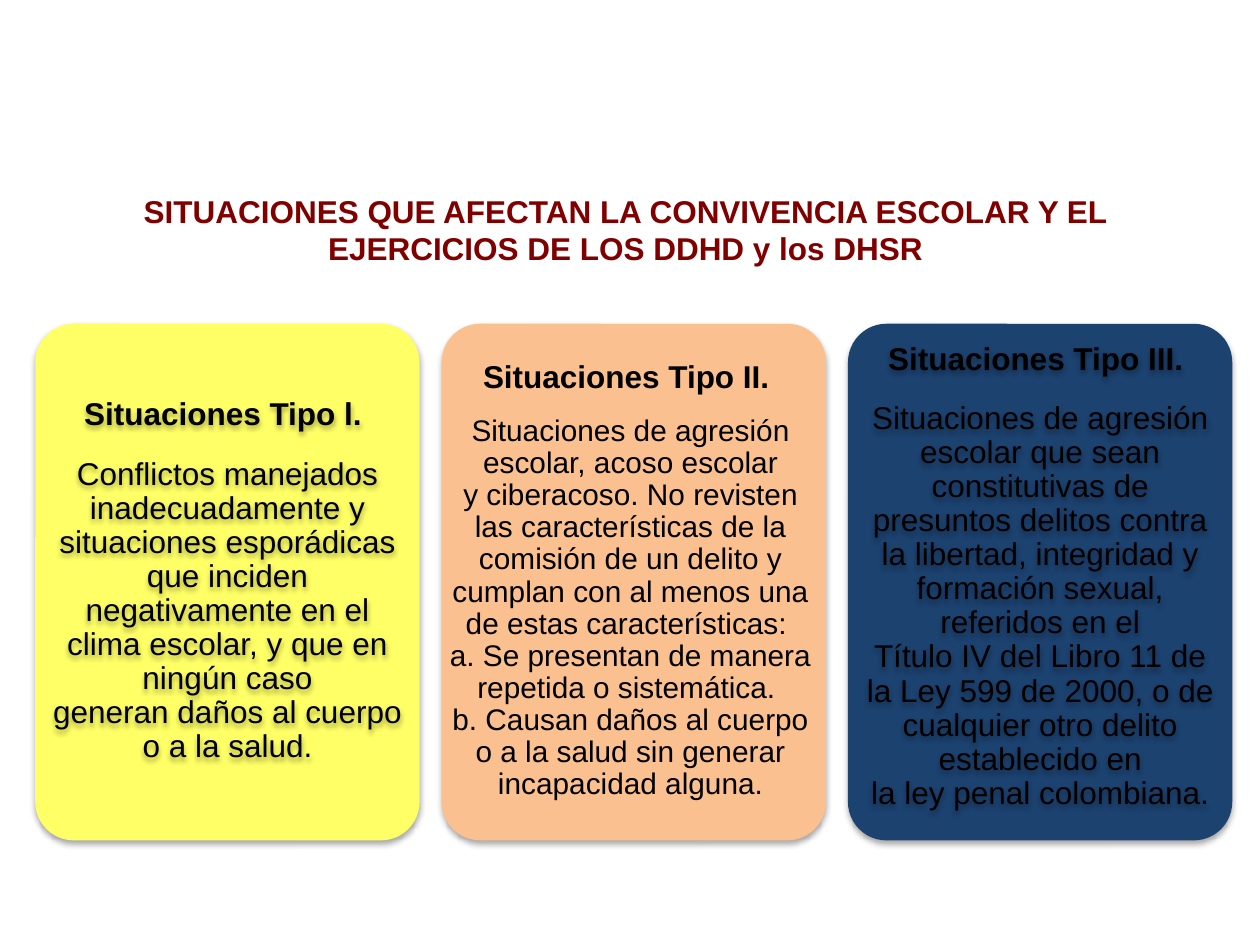
from lxml import etree
from pptx import Presentation
from pptx.dml.color import RGBColor
from pptx.enum.shapes import MSO_SHAPE
from pptx.enum.text import MSO_ANCHOR, MSO_AUTO_SIZE, PP_ALIGN
from pptx.oxml.ns import qn
from pptx.util import Inches, Pt

CENTER = PP_ALIGN.CENTER
TOP, MIDDLE = MSO_ANCHOR.TOP, MSO_ANCHOR.MIDDLE
NO_AUTOFIT = MSO_AUTO_SIZE.NONE
ROUNDED = MSO_SHAPE.ROUNDED_RECTANGLE

FONT = "Arial"
MAROON = RGBColor(0x80, 0x00, 0x00)
BLACK = RGBColor(0x00, 0x00, 0x00)
YELLOW = RGBColor(0xFF, 0xFF, 0x66)
PEACH = RGBColor(0xFA, 0xC0, 0x90)
NAVY = RGBColor(0x1C, 0x42, 0x70)

CARD_LEFT, CARD_TOP = 0.28, 2.57
CARD_WIDTH, CARD_HEIGHT = 3.05, 4.1
CARD_STEP = 3.225

TITLE = ("SITUACIONES QUE AFECTAN LA CONVIVENCIA ESCOLAR Y EL "
         "EJERCICIOS DE LOS DDHD y los DHSR")

# Each card: fill, text box (left, top, width, height), body size,
# gap under the heading, shadow on the text, heading, body paragraphs
CARDS = [
    (YELLOW, (0.28, 2.96, 3.05, 3.31), 18, 14.5, True, "Situaciones Tipo l. ", [
        "Conflictos manejados inadecuadamente y",
        "situaciones esporádicas que inciden negativamente en el clima "
        "escolar, y que en ningún caso",
        "generan daños al cuerpo o a la salud.",
    ]),
    (PEACH, (3.43, 2.57, 3.15, 4.09), 17, 11.4, False, "Situaciones Tipo II. ", [
        "Situaciones de agresión escolar, acoso escolar",
        "y ciberacoso. No revisten las características de la comisión de un "
        "delito y cumplan con al menos una de estas características: ",
        "a. Se presentan de manera repetida o sistemática. ",
        "b. Causan daños al cuerpo o a la salud sin generar incapacidad alguna.",
    ]),
    (NAVY, (6.73, 2.81, 3.05, 3.54), 18, 14.5, True, "Situaciones Tipo III. ", [
        "Situaciones de agresión escolar que sean",
        "constitutivas de presuntos delitos contra la libertad, integridad y "
        "formación sexual, referidos en el",
        "Título IV del Libro 11 de la Ley 599 de 2000, o de cualquier otro "
        "delito establecido en",
        "la ley penal colombiana.",
    ]),
]


def write(p, text, size=18, bold=False, color=BLACK, spacing=None, after=0):
    """Fill a centred paragraph with one formatted run."""
    p.alignment = CENTER
    p.space_before = Pt(0)
    p.space_after = Pt(after)
    if spacing:
        p.line_spacing = spacing
    r = p.add_run()
    r.text = text
    r.font.name = FONT
    r.font.size = Pt(size)
    r.font.bold = bold
    r.font.color.rgb = color


def add_shadow(sp):
    """Give a shape a soft shadow straight below it."""
    sp.shadow.inherit = False
    effects = sp._element.spPr.find(qn("a:effectLst"))
    shadow = etree.SubElement(effects, qn("a:outerShdw"), blurRad="40000",
                              dist="23000", dir="5400000", rotWithShape="0")
    color = etree.SubElement(shadow, qn("a:srgbClr"), val="000000")
    etree.SubElement(color, qn("a:alpha"), val="35000")


def add_title(s):
    sp = s.shapes.title
    sp.left, sp.top = Inches(0.28), Inches(1.47)
    sp.width, sp.height = Inches(9.37), Inches(0.71)
    tf = sp.text_frame
    tf.auto_size = NO_AUTOFIT
    tf.vertical_anchor = TOP
    write(tf.paragraphs[0], TITLE, bold=True, color=MAROON)


def add_panel(s, left, color):
    sp = s.shapes.add_shape(ROUNDED, Inches(left), Inches(CARD_TOP),
                            Inches(CARD_WIDTH), Inches(CARD_HEIGHT))
    sp.adjustments[0] = 0.1
    sp.fill.solid()
    sp.fill.fore_color.rgb = color
    sp.line.fill.background()
    add_shadow(sp)


def add_card_text(s, box, size, gap, shadowed, heading, body):
    sp = s.shapes.add_textbox(*[Inches(v) for v in box])
    if shadowed:
        add_shadow(sp)
    tf = sp.text_frame
    tf.word_wrap = True
    tf.vertical_anchor = MIDDLE
    tf.margin_left = tf.margin_right = Inches(0.12)
    tf.margin_top = tf.margin_bottom = Inches(0.12)
    write(tf.paragraphs[0], heading, bold=True, spacing=0.9, after=gap)
    for text in body:
        write(tf.add_paragraph(), text, size=size, spacing=0.9)


def main():
    prs = Presentation()
    prs.slide_width, prs.slide_height = Inches(10), Inches(7.5)
    s = prs.slides.add_slide(prs.slide_layouts[5])

    add_title(s)
    # Three cards at equal steps
    for i, (color, *content) in enumerate(CARDS):
        add_panel(s, CARD_LEFT + i * CARD_STEP, color)
        add_card_text(s, *content)

    prs.save("out.pptx")


if __name__ == "__main__":
    main()
